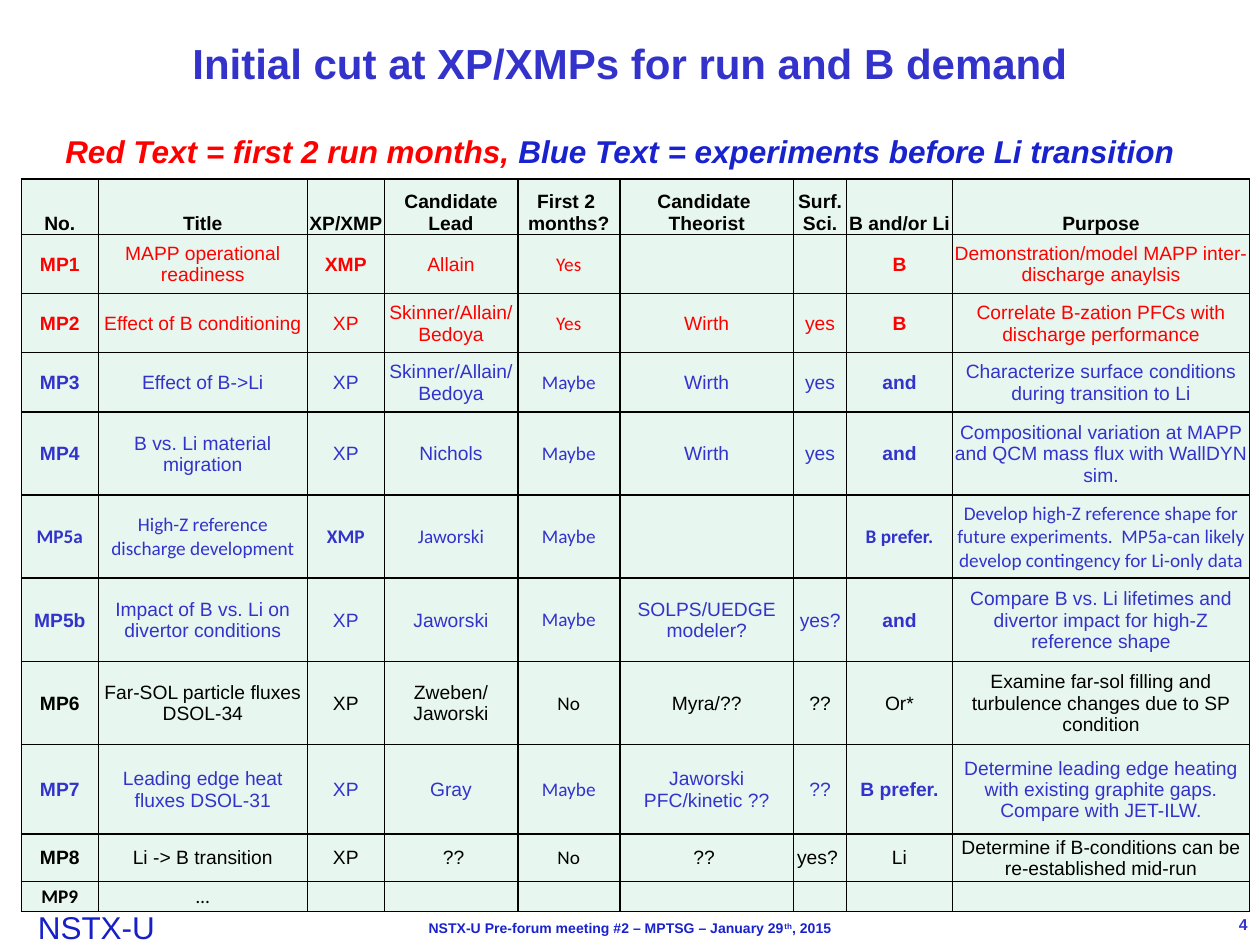
"""Builds the slide listing candidate experiments for the run and their boron demand."""
from lxml.etree import SubElement
from pptx import Presentation
from pptx.dml.color import RGBColor
from pptx.enum.text import MSO_ANCHOR as Anchor, PP_ALIGN as Align
from pptx.oxml.ns import qn
from pptx.util import Inches, Pt

BLACK, RED, INDIGO, BLUE, MINT = "000000", "FF0000", "3333CC", "1822CD", "E7F6EF"
COLUMN_WIDTHS = [0.61, 1.66, 0.61, 1.06, 0.81, 1.38, 0.42, 0.84, 2.36]
ROW_HEIGHTS = [0.44] + [0.47] * 3 + [0.66] * 4 + [0.71, 0.35, 0.24]
HEADERS = ["No.", "Title", "XP/XMP", "Candidate Lead", "First 2 \nmonths?",
           "Candidate \nTheorist", "Surf. Sci.", "B and/or Li", "Purpose"]
EXPERIMENTS = [
    (RED, ["MP1", "MAPP operational readiness", "XMP", "Allain", "Yes", "", "", "B",
           "Demonstration/model MAPP inter-discharge anaylsis"]),
    (RED, ["MP2", "Effect of B conditioning", "XP", "Skinner/Allain/\nBedoya", "Yes", "Wirth",
           "yes", "B", "Correlate B-zation PFCs with discharge performance"]),
    (INDIGO, ["MP3", "Effect of B->Li", "XP", "Skinner/Allain/\nBedoya", "Maybe", "Wirth",
              "yes", "and", "Characterize surface conditions during transition to Li"]),
    (INDIGO, ["MP4", "B vs. Li material migration", "XP", "Nichols", "Maybe", "Wirth", "yes", "and",
              "Compositional variation at MAPP and QCM mass flux with WallDYN sim."]),
    (INDIGO, ["MP5a", "High-Z reference discharge development", "XMP", "Jaworski", "Maybe", "", "",
              "B prefer.", "Develop high-Z reference shape for future experiments.  "
              "MP5a-can likely develop contingency for Li-only data"]),
    (INDIGO, ["MP5b", "Impact of B vs. Li on divertor conditions", "XP", "Jaworski", "Maybe",
              "SOLPS/UEDGE modeler?", "yes?", "and",
              "Compare B vs. Li lifetimes and divertor impact for high-Z reference shape"]),
    (BLACK, ["MP6", "Far-SOL particle fluxes DSOL-34", "XP", "Zweben/\nJaworski", "No", "Myra/??",
             "??", "Or*", "Examine far-sol filling and turbulence changes due to SP condition"]),
    (INDIGO, ["MP7", "Leading edge heat fluxes DSOL-31", "XP", "Gray", "Maybe",
              "Jaworski PFC/kinetic ??", "??", "B prefer.",
              "Determine leading edge heating with existing graphite gaps. Compare with JET-ILW."]),
    (BLACK, ["MP8", "Li -> B transition", "XP", " ??", "No", "?? ", "yes? ", "Li",
             "Determine if B-conditions can be re-established mid-run"]),
    (BLACK, ["MP9", "…"] + [""] * 7),
]
BOLD_ENTRIES = {"XMP", "B", "and", "B prefer."}
CALIBRI_ROWS = {"MP5a", "MP9"}
CALIBRI_COLUMN = 4


def color(value):
    return RGBColor.from_string(value)


class SlideBuilder:
    def __init__(self, slide, font="Arial"):
        self.slide = slide
        self.font = font

    def run(self, paragraph, text, size, fill, bold=False, italic=False, font=None, baseline=0):
        run = paragraph.add_run()
        run.text = text
        run.font.name = font or self.font
        run.font.size = Pt(size)
        run.font.bold = bold
        run.font.italic = italic
        run.font.color.rgb = color(fill)
        if baseline:
            run.font._rPr.set("baseline", str(baseline))

    def text(self, left, top, width, height, align=Align.LEFT, anchor=Anchor.TOP, inset=True):
        shape = self.slide.shapes.add_textbox(*map(Inches, (left, top, width, height)))
        frame = shape.text_frame
        frame.word_wrap = True
        frame.vertical_anchor = anchor
        if not inset:
            frame.margin_left = frame.margin_right = frame.margin_top = frame.margin_bottom = 0
        paragraph = frame.paragraphs[0]
        paragraph.alignment = align
        return paragraph

    def cell(self, cell, text, fill, bold, font, anchor):
        cell.margin_left = cell.margin_right = cell.margin_top = Inches(0.01)
        cell.margin_bottom = 0
        cell.vertical_anchor = anchor
        properties = cell._tc.get_or_add_tcPr()
        for side in ("a:lnL", "a:lnR", "a:lnT", "a:lnB"):
            line = SubElement(properties, qn(side), w=str(Pt(1)))
            SubElement(SubElement(line, qn("a:solidFill")), qn("a:srgbClr"), val=BLACK)
        cell.fill.solid()
        cell.fill.fore_color.rgb = color(MINT)
        paragraph = cell.text_frame.paragraphs[0]
        paragraph.alignment = Align.CENTER
        if not text:
            SubElement(paragraph._p, qn("a:endParaRPr"), sz="1100")
            return
        for index, part in enumerate(text.split("\n")):
            if index:
                paragraph.add_line_break()
            self.run(paragraph, part, 11, fill, bold, font=font)

    def table(self, left, top):
        shape = self.slide.shapes.add_table(
            len(ROW_HEIGHTS), len(COLUMN_WIDTHS), Inches(left), Inches(top),
            Inches(sum(COLUMN_WIDTHS)), Inches(sum(ROW_HEIGHTS)))
        table = shape.table
        table.horz_banding = False
        for column, width in zip(table.columns, COLUMN_WIDTHS):
            column.width = Inches(width)
        for row, height in zip(table.rows, ROW_HEIGHTS):
            row.height = Inches(height)
        for column, header in enumerate(HEADERS):
            self.cell(table.cell(0, column), header, BLACK, True, self.font, Anchor.BOTTOM)
        for row, (fill, entries) in enumerate(EXPERIMENTS, 1):
            for column, entry in enumerate(entries):
                calibri = entries[0] in CALIBRI_ROWS or column == CALIBRI_COLUMN
                bold = column == 0 or entry in BOLD_ENTRIES
                self.cell(table.cell(row, column), entry, fill, bold,
                          "Calibri" if calibri else self.font, Anchor.MIDDLE)


def main():
    presentation = Presentation()
    presentation.slide_width, presentation.slide_height = Inches(10), Inches(7.5)
    builder = SlideBuilder(presentation.slides.add_slide(presentation.slide_layouts[6]))

    facility = builder.text(0.3, 7.21, 1.12, 0.28, inset=False)
    builder.run(facility, "NSTX-U", 18, "171FC7")
    footer = builder.text(2, 7.25, 6, 0.24, Align.CENTER)
    builder.run(footer, "NSTX-U Pre-forum meeting #2 – MPTSG – January 29", 8, BLUE, True)
    builder.run(footer, "th", 8, BLUE, True, baseline=30000)
    builder.run(footer, ", 2015", 8, BLUE, True)

    title = builder.text(0, 0, 10, 1, Align.CENTER, Anchor.MIDDLE)
    builder.run(title, "Initial cut at XP/XMPs for run and B demand", 24, INDIGO, True)
    builder.table(0.17, 1.42)
    number = builder.text(9.17, 7.25, 0.83, 0.17, Align.RIGHT, Anchor.MIDDLE)
    builder.run(number, "4", 9, INDIGO, True)
    legend = builder.text(0.42, 1, 9.17, 0.4)
    builder.run(legend, "Red Text = first 2 run months,", 18, RED, True, True)
    builder.run(legend, " Blue Text = experiments before Li transition", 18, BLUE, True, True)

    presentation.save("out.pptx")


if __name__ == "__main__":
    main()
